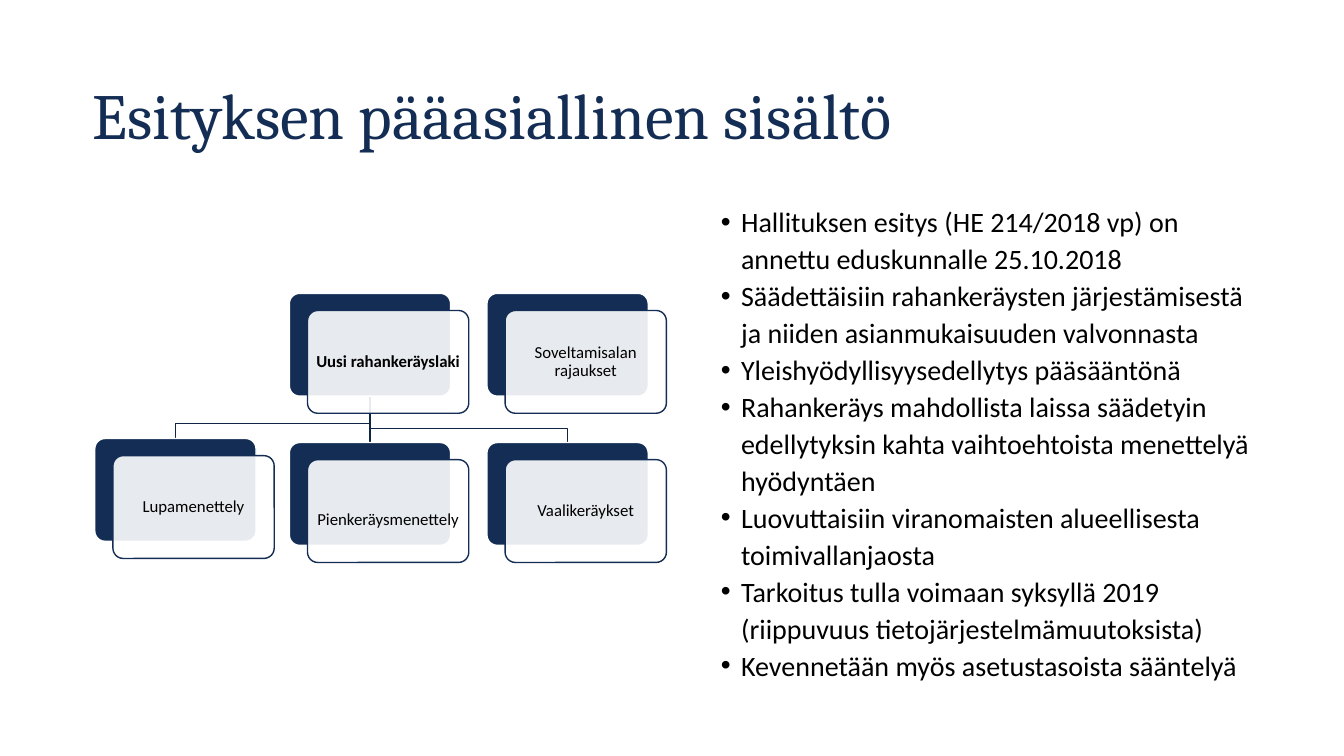
"""Builds the slide on the main content of the fundraising bill."""
from dataclasses import dataclass

from lxml.etree import SubElement
from pptx import Presentation
from pptx.dml.color import RGBColor
from pptx.enum.shapes import MSO_CONNECTOR, MSO_SHAPE
from pptx.enum.text import MSO_ANCHOR, MSO_AUTO_SIZE, PP_ALIGN
from pptx.oxml.ns import qn
from pptx.util import Emu, Pt

PX = 9144


@dataclass(frozen=True)
class Theme:
    navy: str = "142D55"
    branch: str = "102444"
    white: str = "FFFFFF"
    black: str = "000000"
    heading_font: str = "Cambria"
    body_font: str = "Calibri"
    title_size: int = 46
    list_size: int = 20
    card_size: int = 12


class SlideBuilder:
    def __init__(self, slide, theme):
        self.slide = slide
        self.theme = theme

    def place(self, holder, left, top, width, height):
        holder.left, holder.top = Emu(left * PX), Emu(top * PX)
        holder.width, holder.height = Emu(width * PX), Emu(height * PX)

    def frame(self, holder, anchor, margin=0):
        frame = holder.text_frame
        frame.word_wrap = True
        frame.auto_size = MSO_AUTO_SIZE.NONE
        frame.vertical_anchor = anchor
        frame.margin_left = frame.margin_right = Emu(margin * PX)
        frame.margin_top = frame.margin_bottom = Emu(margin * PX)
        return frame

    def add_wording(self, paragraph, wording, font, size, color, align, spacing, bold=False):
        paragraph.alignment = align
        paragraph.line_spacing = spacing
        paragraph.space_before = paragraph.space_after = Pt(0)
        run = paragraph.add_run()
        run.text = wording
        run.font.name = font
        run.font.size = Pt(size)
        run.font.bold = bold
        run.font.color.rgb = RGBColor.from_string(color)

    def title(self, wording, *box):
        heading = self.slide.shapes.title
        self.place(heading, *box)
        frame = self.frame(heading, MSO_ANCHOR.BOTTOM)
        self.add_wording(frame.paragraphs[0], wording, self.theme.heading_font,
                         self.theme.title_size, self.theme.navy, PP_ALIGN.LEFT, 0.9)

    def bullets(self, points, indent, *box):
        body = self.slide.placeholders[1]
        self.place(body, *box)
        frame = self.frame(body, MSO_ANCHOR.TOP)
        for index, point in enumerate(points):
            paragraph = frame.add_paragraph() if index else frame.paragraphs[0]
            properties = paragraph._p.get_or_add_pPr()
            properties.set("marL", str(indent * PX))
            properties.set("indent", str(-indent * PX))
            SubElement(properties, qn("a:buFont"), typeface="Arial")
            SubElement(properties, qn("a:buChar"), char="•")
            self.add_wording(paragraph, point, self.theme.body_font, self.theme.list_size,
                             self.theme.black, PP_ALIGN.LEFT, 1.1)

    def stroke(self, line, color):
        line.color.rgb = RGBColor.from_string(color)
        line.width = Pt(1)

    def elbow(self, start_x, start_y, turn_y, end_x, end_y):
        outline = self.slide.shapes.build_freeform(start_x, start_y, scale=PX)
        outline.add_line_segments(
            [(start_x, turn_y), (end_x, turn_y), (end_x, end_y)], close=False)
        branch = outline.convert_to_shape()
        branch.fill.background()
        branch.shadow.inherit = False
        self.stroke(branch.line, self.theme.branch)

    def stem(self, x, start_y, end_y):
        branch = self.slide.shapes.add_connector(
            MSO_CONNECTOR.STRAIGHT, *(Emu(v * PX) for v in (x, start_y, x, end_y)))
        self.stroke(branch.line, self.theme.branch)
        SubElement(branch._element.spPr, qn("a:effectLst"))

    def panel(self, fill, outline, *box):
        panel = self.slide.shapes.add_shape(
            MSO_SHAPE.ROUNDED_RECTANGLE, *(Emu(v * PX) for v in box))
        panel.adjustments[0] = 0.1
        panel.shadow.inherit = False
        panel.fill.solid()
        panel.fill.fore_color.rgb = RGBColor.from_string(fill)
        self.stroke(panel.line, outline)
        return panel

    def card(self, wording, left, top, width, height, bold=False):
        theme = self.theme
        self.panel(theme.navy, theme.white, left, top, width, height)
        front = self.panel(theme.white, theme.navy, left + 18, top + 17, width, height)
        tint = front._element.spPr.find(qn("a:solidFill")).find(qn("a:srgbClr"))
        SubElement(tint, qn("a:alpha"), val="90000")
        frame = self.frame(front, MSO_ANCHOR.MIDDLE, 5)
        self.add_wording(frame.paragraphs[0], wording, theme.body_font, theme.card_size,
                         theme.black, PP_ALIGN.CENTER, 0.9, bold)


def main():
    presentation = Presentation()
    presentation.slide_width = Emu(1333 * PX)
    presentation.slide_height = Emu(750 * PX)
    slide = presentation.slides.add_slide(presentation.slide_layouts[1])
    builder = SlideBuilder(slide, Theme())

    builder.title("Esityksen pääasiallinen sisältö", 92, 42, 1150, 110)

    card_width, card_height = 160, 102
    left_column, middle_column, right_column = 94, 287, 483
    law_top, permit_top, lower_top = 291, 435, 439
    law_bottom = law_top + card_height
    law_center = middle_column + card_width // 2
    builder.elbow(law_center, law_bottom, 425, right_column + card_width // 2, lower_top)
    builder.stem(law_center, law_bottom, lower_top)
    builder.elbow(law_center, law_bottom, 420, left_column + card_width // 2, permit_top)

    cards = [
        ("Uusi rahankeräyslaki", middle_column, law_top, True),
        ("Lupamenettely", left_column, permit_top, False),
        (" Pienkeräysmenettely", middle_column, lower_top, False),
        ("Vaalikeräykset", right_column, lower_top, False),
        ("Soveltamisalan rajaukset", right_column, law_top, False),
    ]
    for wording, left, top, bold in cards:
        builder.card(wording, left, top, card_width, card_height, bold)

    builder.bullets([
        "Hallituksen esitys (HE 214/2018 vp) on annettu eduskunnalle 25.10.2018",
        "Säädettäisiin rahankeräysten järjestämisestä ja niiden asianmukaisuuden valvonnasta",
        "Yleishyödyllisyysedellytys pääsääntönä",
        "Rahankeräys mahdollista laissa säädetyin edellytyksin kahta vaihtoehtoista "
        "menettelyä hyödyntäen",
        "Luovuttaisiin viranomaisten alueellisesta toimivallanjaosta",
        "Tarkoitus tulla voimaan syksyllä 2019 (riippuvuus tietojärjestelmämuutoksista)",
        "Kevennetään myös asetustasoista sääntelyä",
    ], 20, 715, 200, 531, 420)

    presentation.save("out.pptx")


if __name__ == "__main__":
    main()
